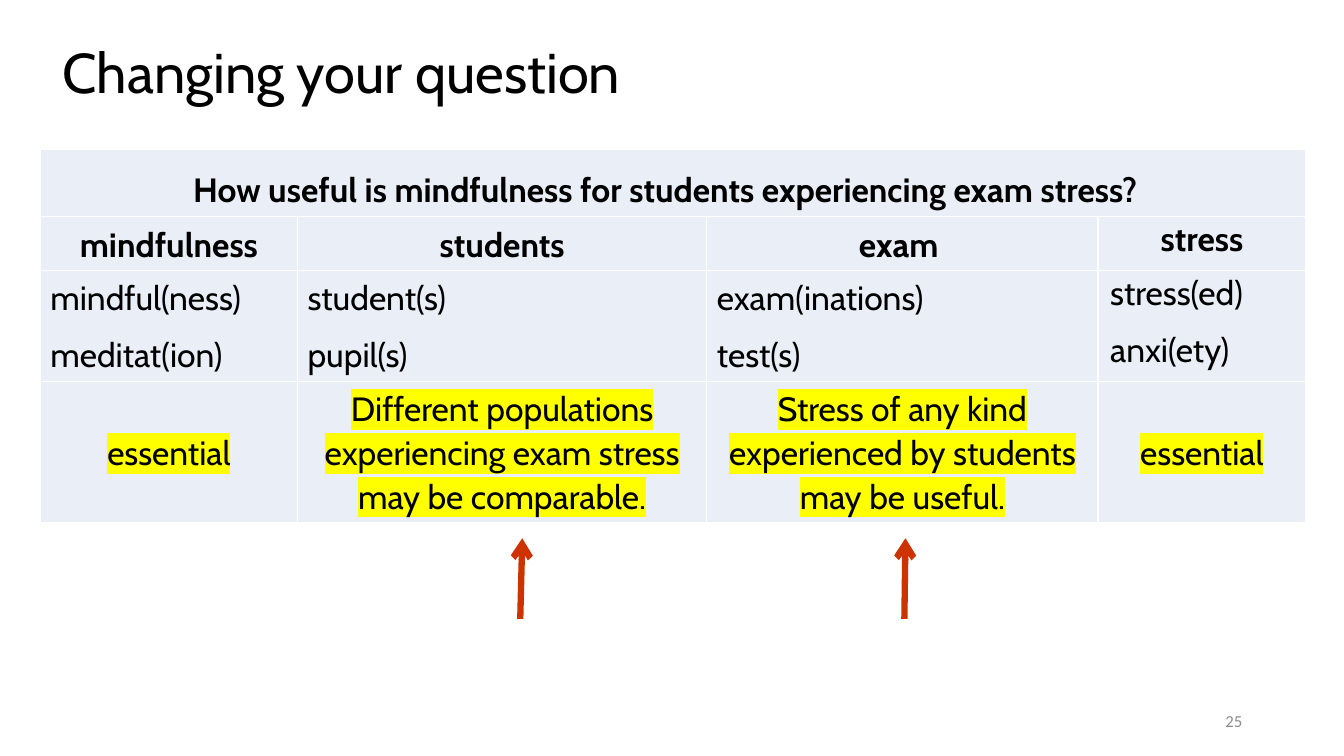
from dataclasses import dataclass

from lxml import etree
from pptx import Presentation
from pptx.dml.color import RGBColor
from pptx.enum.shapes import MSO_CONNECTOR
from pptx.enum.text import MSO_ANCHOR, MSO_AUTO_SIZE, PP_ALIGN
from pptx.oxml.ns import qn
from pptx.util import Inches, Pt

CENTER, JUSTIFY, RIGHT = PP_ALIGN.CENTER, PP_ALIGN.JUSTIFY, PP_ALIGN.RIGHT
TOP, MIDDLE = MSO_ANCHOR.TOP, MSO_ANCHOR.MIDDLE
STRAIGHT = MSO_CONNECTOR.STRAIGHT
NO_FIT = MSO_AUTO_SIZE.NONE
TITLE_ONLY = 5


@dataclass(frozen=True)
class Theme:
    font: str = "Cabin"
    number_font: str = "Calibri"
    text: str = "000000"
    muted: str = "8C8C8C"
    cell: str = "EAEFF7"
    border: str = "FFFFFF"
    highlight: str = "FFFF00"
    arrow: str = "CC3300"
    title_size: int = 40
    body_size: int = 24
    number_size: int = 12
    synonym_gap: float = 9.5


class SlideBuilder:
    """Places elements in percent of the slide's width and height."""

    def __init__(self, deck, theme):
        self.theme = theme
        self.unit_x = deck.slide_width / 100
        self.unit_y = deck.slide_height / 100
        self.slide = deck.slides.add_slide(deck.slide_layouts[TITLE_ONLY])

    def x(self, share):
        return round(share * self.unit_x)

    def y(self, share):
        return round(share * self.unit_y)

    def box(self, left, top, width, height):
        return self.x(left), self.y(top), self.x(width), self.y(height)

    def set_text(self, frame, text, size, align, color=None, font=None,
                 bold=False, spacing=1.0, gap=0, marked=False):
        frame.text = text
        for index, paragraph in enumerate(frame.paragraphs):
            paragraph.alignment = align
            paragraph.line_spacing = spacing
            paragraph.space_before = Pt(gap if index else 0)
            for run in paragraph.runs:
                run.font.size = Pt(size)
                run.font.bold = bold
                run.font.color.rgb = RGBColor.from_string(color or self.theme.text)
                run.font.name = font or self.theme.font
                if marked:
                    self.mark(run)

    def mark(self, run):
        highlight = etree.Element(qn("a:highlight"))
        etree.SubElement(highlight, qn("a:srgbClr"), val=self.theme.highlight)
        run.font._element.find(qn("a:solidFill")).addnext(highlight)

    def title(self, text, *place):
        heading = self.slide.shapes.title
        heading.left, heading.top, heading.width, heading.height = self.box(*place)
        frame = heading.text_frame
        frame.word_wrap = False
        frame.auto_size = NO_FIT
        frame.vertical_anchor = TOP
        self.set_text(frame, text, self.theme.title_size, CENTER, spacing=0.8)

    def page_number(self, text, *place):
        frame = self.slide.shapes.add_textbox(*self.box(*place)).text_frame
        frame.word_wrap = True
        frame.vertical_anchor = MIDDLE
        self.set_text(frame, text, self.theme.number_size, RIGHT,
                      self.theme.muted, self.theme.number_font)

    def table(self, left, top, widths, heights):
        place = self.box(left, top, sum(widths), sum(heights))
        grid = self.slide.shapes.add_table(len(heights), len(widths), *place).table
        grid.first_row = grid.horz_banding = False
        for column, width in zip(grid.columns, widths):
            column.width = self.x(width)
        for row, height in zip(grid.rows, heights):
            row.height = self.y(height)
        for cell in grid.iter_cells():
            self.cell_style(cell)
        return grid

    def cell_style(self, cell):
        properties = cell._tc.get_or_add_tcPr()
        for side in ("lnL", "lnR", "lnT", "lnB"):
            line = etree.SubElement(properties, qn(f"a:{side}"), w=str(Pt(1)))
            fill = etree.SubElement(line, qn("a:solidFill"))
            etree.SubElement(fill, qn("a:srgbClr"), val=self.theme.border)
        cell.fill.solid()
        cell.fill.fore_color.rgb = RGBColor.from_string(self.theme.cell)

    def cell(self, cell, text, align=CENTER, **style):
        self.set_text(cell.text_frame, text, self.theme.body_size, align,
                      spacing=1.07, **style)

    def arrow(self, start, end):
        (x1, y1), (x2, y2) = start, end
        pointer = self.slide.shapes.add_connector(
            STRAIGHT, self.x(x1), self.y(y1), self.x(x2), self.y(y2))
        pointer.line.color.rgb = RGBColor.from_string(self.theme.arrow)
        pointer.line.width = Pt(4.5)
        etree.SubElement(pointer.line._get_or_add_ln(), qn("a:tailEnd"), type="arrow")
        etree.SubElement(pointer._element.spPr, qn("a:effectLst"))


CONCEPTS = [
    # concept, search terms, verdict
    ("mindfulness", "mindful(ness)\nmeditat(ion)", "essential"),
    ("students", "student(s)\npupil(s)",
     "Different populations experiencing exam stress may be comparable."),
    ("exam ", "exam(inations)\ntest(s)",
     "Stress of any kind experienced by students may be useful."),
    ("stress", "stress(ed)\nanxi(ety)", "essential"),
]


def main():
    deck = Presentation()
    deck.slide_width, deck.slide_height = Inches(13.33), Inches(7.5)
    theme = Theme()
    page = SlideBuilder(deck, theme)

    page.title("Changing your question", 2.4, 6, 46, 8.53)

    # Question across the top of the table
    concept_table = page.table(3, 19.73, [19.13, 30.46, 29.11, 15.45],
                               [8.93, 7.07, 14.4, 18.4])
    question = concept_table.cell(0, 0)
    question.merge(concept_table.cell(0, len(CONCEPTS) - 1))
    question.margin_top, question.margin_right = page.y(2.4), page.x(1.9)
    page.cell(question,
              "How useful is mindfulness for students experiencing exam stress?",
              bold=True)

    # One column per concept
    for column, (concept, terms, verdict) in enumerate(CONCEPTS):
        heading, synonyms, advice = (concept_table.cell(row, column)
                                     for row in (1, 2, 3))
        page.cell(heading, concept, bold=True)
        page.cell(synonyms, terms, JUSTIFY, gap=theme.synonym_gap)
        page.cell(advice, verdict, marked=True)
        advice.vertical_anchor = MIDDLE

    # The last column has no cell margins, only an indent for its terms
    for row in (1, 2, 3):
        stress = concept_table.cell(row, len(CONCEPTS) - 1)
        stress.margin_left = stress.margin_right = 0
        stress.margin_top = stress.margin_bottom = 0
    concept_table.cell(2, len(CONCEPTS) - 1).margin_left = page.x(0.9)

    # Arrows to the concepts that can change
    for tail_x, head_x in ((38.71, 38.86), (67.29, 67.37)):
        page.arrow((tail_x, 81.87), (head_x, 71.2))

    page.page_number("25", 70.67, 92.67, 22.5, 5.33)
    deck.save("out.pptx")


if __name__ == "__main__":
    main()
